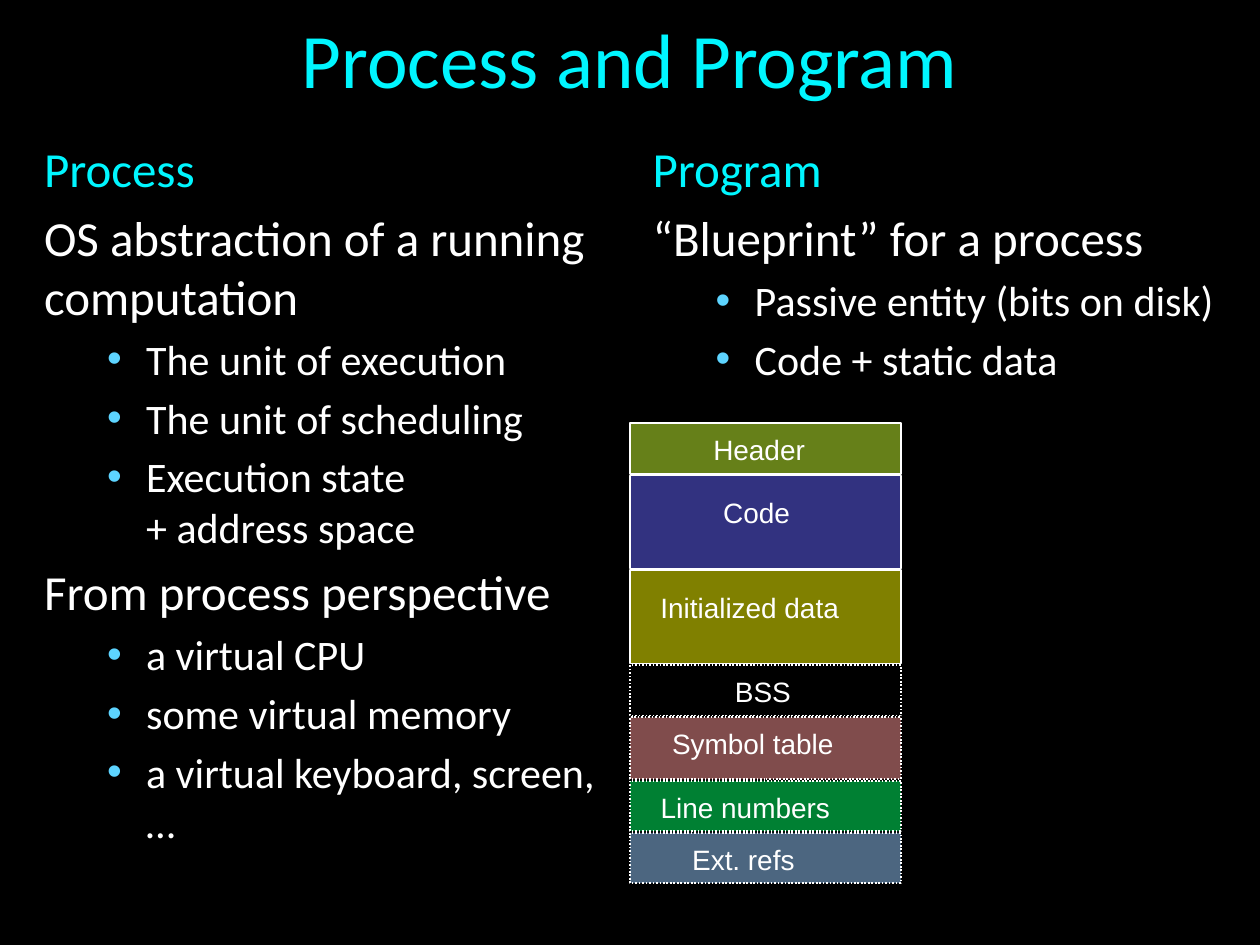
"""Build the "Process and Program" slide."""
from typing import NamedTuple

import pptx
import pptx.dml.color
import pptx.enum.dml
import pptx.enum.shapes
import pptx.enum.text
import pptx.oxml
import pptx.oxml.ns
import pptx.util

COLUMNS, ROWS = 100, 75
CELL = pptx.util.Inches(0.1)
CYAN, SKY, WHITE, BLACK = "00F6FF", "5DD4FF", "FFFFFF", "000000"
STACK_LEFT, STACK_TOP, STACK_WIDTH, STACK_HEIGHT = 50, 33.6, 21.5, 36.5
LABEL_HEIGHT = 3.7


class Line(NamedTuple):
    """One paragraph of a column: its text, level and colour."""
    text: str
    level: int = 0
    color: str = WHITE


class Section(NamedTuple):
    """One band of the program file, measured in grid cells."""
    label: str
    height: float
    fill: str | None
    label_left: float
    label_width: float
    dotted: bool = False


PROCESS = [
    Line("Process", color=CYAN),
    Line("OS abstraction of a running computation"),
    Line("The unit of execution", 1),
    Line("The unit of scheduling", 1),
    Line("Execution state\v+ address space", 1),
    Line("From process perspective"),
    Line("a virtual CPU", 1),
    Line("some virtual memory", 1),
    Line("a virtual keyboard, screen, …", 1),
]
PROGRAM = [
    Line("Program", color=CYAN),
    Line("“Blueprint” for a process"),
    Line("Passive entity (bits on disk)", 1),
    Line("Code + static data", 1),
]
SECTIONS = [
    Section("Header", 4, "CCFF33", 55.6, 9.3),
    Section("Code", 7.4, "6565FF", 56.4, 7.3),
    Section("Initialized data", 7.4, "FFFF00", 51.4, 16.2),
    Section("BSS", 4, None, 57.3, 6.5, True),
    Section("Symbol table", 4.9, "FF9999", 52.3, 14.9, True),
    Section("Line numbers", 4, "00FF66", 51.4, 15.5, True),
    Section("Ext. refs", 4, "99CCFF", 53.9, 10.2, True),
]


def cells(*counts: float) -> list[int]:
    """Turn grid cell counts into lengths."""
    return [round(n * CELL) for n in counts]


def rgb(value: str) -> pptx.dml.color.RGBColor:
    """Turn a hex string into a colour."""
    return pptx.dml.color.RGBColor.from_string(value)


def place(sp, left: float, top: float, width: float, height: float) -> None:
    """Move a placeholder to a place on the grid."""
    sp.left, sp.top, sp.width, sp.height = cells(left, top, width, height)


def format_runs(p, size: float, face: str, color: str) -> None:
    """Set size, face and colour of every run in a paragraph."""
    for r in p.runs:
        r.font.size = pptx.util.Pt(size)
        r.font.name = face
        r.font.color.rgb = rgb(color)


def set_bullet(p, level: int) -> None:
    """Give sub-items a round bullet and top items none."""
    pPr = p._p.get_or_add_pPr()
    margin, indent = cells(8.1, -3.1) if level else (0, 0)
    pPr.set("marL", str(margin))
    pPr.set("indent", str(indent))
    parts = (
        [f'<a:buClr {{}}><a:srgbClr val="{SKY}"/></a:buClr>',
         '<a:buFont {} typeface="Arial"/>', '<a:buChar {} char="•"/>']
        if level else ["<a:buNone {}/>"]
    )
    for part in parts:
        pPr.append(pptx.oxml.parse_xml(part.format(pptx.oxml.ns.nsdecls("a"))))


def fill_column(sp, lines: list[Line]) -> None:
    """Write the paragraphs of a body placeholder."""
    tf = sp.text_frame
    tf.auto_size = pptx.enum.text.MSO_AUTO_SIZE.NONE
    for i, line in enumerate(lines):
        p = tf.add_paragraph() if i else tf.paragraphs[0]
        p.text = line.text
        p.level = line.level
        set_bullet(p, line.level)
        format_runs(p, 24 if line.level else 28, "Calibri", line.color)


def draw_section(shapes, section: Section, top: float) -> None:
    """Draw one band and its label."""
    sp = shapes.add_shape(
        pptx.enum.shapes.MSO_SHAPE.RECTANGLE,
        *cells(STACK_LEFT, top, STACK_WIDTH, section.height))
    sp.shadow.inherit = False
    sp.line.color.rgb = rgb(WHITE)
    sp.line.width = pptx.util.Pt(1)
    if section.dotted:
        sp.line.dash_style = pptx.enum.dml.MSO_LINE.ROUND_DOT
    if section.fill:
        sp.fill.solid()
        sp.fill.fore_color.rgb = rgb(section.fill)
        color = sp._element.spPr.find(".//" + pptx.oxml.ns.qn("a:srgbClr"))
        color.append(pptx.oxml.parse_xml(
            f'<a:alpha {pptx.oxml.ns.nsdecls("a")} val="50000"/>'))
    else:
        sp.fill.background()

    drop = 1.1 if section.height > 5 else 0.25
    label = shapes.add_textbox(
        *cells(section.label_left, top + drop, section.label_width, LABEL_HEIGHT))
    tf = label.text_frame
    tf.word_wrap = False
    tf.auto_size = pptx.enum.text.MSO_AUTO_SIZE.SHAPE_TO_FIT_TEXT
    p = tf.paragraphs[0]
    p.text = section.label
    p.alignment = pptx.enum.text.PP_ALIGN.CENTER
    format_runs(p, 16, "Arial", WHITE)


def draw_stack(shapes, sections: list[Section]) -> None:
    """Stack the bands with equal gaps in one group."""
    group = shapes.add_group_shape()
    gap = (STACK_HEIGHT - sum(s.height for s in sections)) / (len(sections) - 1)
    top = STACK_TOP
    for section in sections:
        draw_section(group.shapes, section, top)
        top += section.height + gap


def main() -> None:
    """Build and save the slide."""
    prs = pptx.Presentation()
    prs.slide_width, prs.slide_height = cells(COLUMNS, ROWS)
    s = prs.slides.add_slide(prs.slide_layouts[3])
    s.background.fill.solid()
    s.background.fill.fore_color.rgb = rgb(BLACK)

    title, left, right = s.placeholders[0], s.placeholders[1], s.placeholders[2]
    place(title, 2.5, 1.7, 95, 5.8)
    title.text_frame.text = "Process and Program"
    title.text_frame.auto_size = pptx.enum.text.MSO_AUTO_SIZE.NONE
    p = title.text_frame.paragraphs[0]
    p.alignment = pptx.enum.text.PP_ALIGN.CENTER
    format_runs(p, 44, "Calibri", CYAN)

    place(left, 2.5, 10.5, 46.7, 59.5)
    fill_column(left, PROCESS)
    place(right, 50.8, 10.5, 47.5, 59.5)
    fill_column(right, PROGRAM)
    draw_stack(s.shapes, SECTIONS)
    prs.save("out.pptx")


if __name__ == "__main__":
    main()
